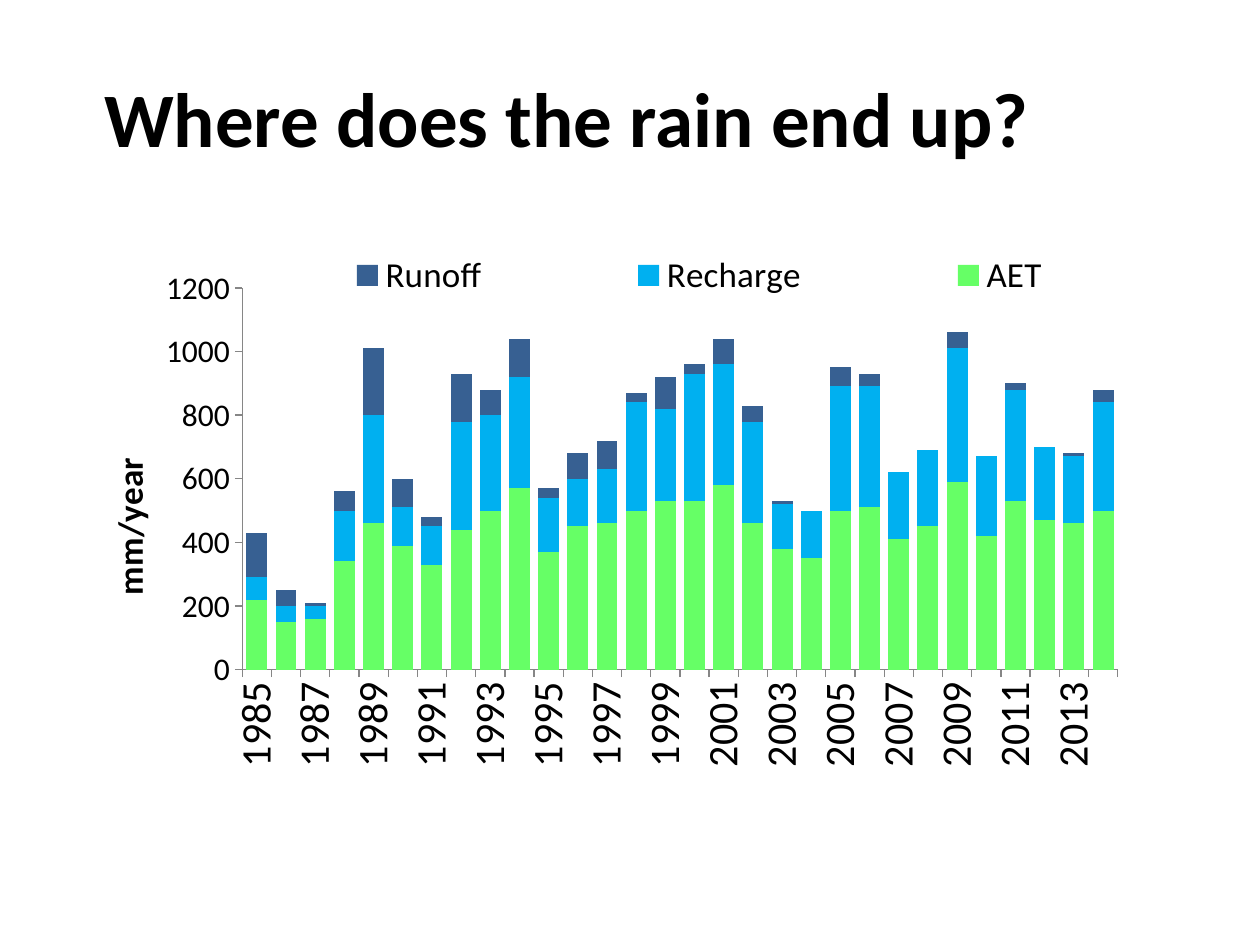
from lxml import etree
from pptx import Presentation
from pptx.chart.data import CategoryChartData
from pptx.dml.color import RGBColor
from pptx.enum.chart import XL_CHART_TYPE, XL_LEGEND_POSITION, XL_TICK_LABEL_POSITION, XL_TICK_MARK
from pptx.enum.text import MSO_ANCHOR, PP_ALIGN
from pptx.oxml.ns import qn
from pptx.util import Inches, Pt

STACKED = XL_CHART_TYPE.COLUMN_STACKED
LEGEND_RIGHT = XL_LEGEND_POSITION.RIGHT
LABELS_LOW = XL_TICK_LABEL_POSITION.LOW
TICK_OUTSIDE = XL_TICK_MARK.OUTSIDE
MIDDLE = MSO_ANCHOR.MIDDLE
CENTER = PP_ALIGN.CENTER

FONT = "Calibri"
COLORS = {
    "text": "000000",
    "axis": "868686",
    "AET": "66FF66",
    "Recharge": "00B0F0",
    "Runoff": "376092",
}
YEARS = [str(year) for year in range(1985, 2015)]
RAIN = {
    "AET": [220, 150, 160, 340, 460, 390, 330, 440, 500, 570,
            370, 450, 460, 500, 530, 530, 580, 460, 380, 350,
            500, 510, 410, 450, 590, 420, 530, 470, 460, 500],
    "Recharge": [70, 50, 40, 160, 340, 120, 120, 340, 300, 350,
                 170, 150, 170, 340, 290, 400, 380, 320, 140, 150,
                 390, 380, 210, 240, 420, 250, 350, 230, 210, 340],
    "Runoff": [140, 50, 10, 60, 210, 90, 30, 150, 80, 120,
               30, 80, 90, 30, 100, 30, 80, 50, 10, 0,
               60, 40, 0, 0, 50, 0, 20, 0, 10, 40],
}


def color(name):
    return RGBColor.from_string(COLORS[name])


def style_font(font, size, bold=False):
    font.name = FONT
    font.size = Pt(size)
    font.bold = bold
    font.color.rgb = color("text")


def set_layout(element, index, **values):
    """Give a chart part a manual layout, as fractions of the chart, at a child index."""
    for old in element.findall(qn("c:layout")):
        element.remove(old)
    layout = etree.Element(qn("c:layout"))
    manual = etree.SubElement(layout, qn("c:manualLayout"))
    for tag, value in values.items():
        etree.SubElement(manual, qn(f"c:{tag}")).set("val", str(value))
    element.insert(index, layout)


def add_title(slide, text):
    sp = slide.shapes.add_textbox(Inches(0.5), Inches(0.3), Inches(8), Inches(1.25))
    tf = sp.text_frame
    tf.word_wrap = True
    tf.vertical_anchor = MIDDLE
    tf.text = text
    p = tf.paragraphs[0]
    p.alignment = CENTER
    style_font(p.runs[0].font, 44, bold=True)


def style_axis(axis, size):
    axis.has_major_gridlines = False
    axis.major_tick_mark = TICK_OUTSIDE
    axis.format.line.color.rgb = color("axis")
    axis.format.line.width = Pt(0.75)
    style_font(axis.tick_labels.font, size)


def style_category_axis(axis):
    """Turn the years upright and name every second one."""
    style_axis(axis, 24)
    axis.tick_label_position = LABELS_LOW
    body = axis._element.find(qn("c:txPr")).find(qn("a:bodyPr"))
    body.set("rot", "-5400000")
    body.set("vert", "horz")
    skip = etree.Element(qn("c:tickLblSkip"))
    skip.set("val", "2")
    axis._element.find(qn("c:noMultiLvlLbl")).addprevious(skip)


def style_value_axis(axis, title):
    style_axis(axis, 18)
    axis.minimum_scale, axis.maximum_scale, axis.major_unit = 0, 1200, 200
    axis.tick_labels.number_format = "0"
    axis.tick_labels.number_format_is_linked = False
    tf = axis.axis_title.text_frame
    tf.text = title
    style_font(tf.paragraphs[0].runs[0].font, 20, bold=True)
    set_layout(axis.axis_title._element, 1, xMode="edge", yMode="edge", x=0.04, y=0.37)


def add_legend(chart):
    chart.has_legend = True
    legend = chart.legend
    legend.position = LEGEND_RIGHT
    legend.include_in_layout = False
    style_font(legend.font, 20)
    set_layout(legend._element, 1, xMode="edge", yMode="edge",
               x=0.14, y=0.06, w=0.86, h=0.08)


def add_rain_chart(slide):
    data = CategoryChartData(number_format="0")
    data.categories = YEARS
    for name, values in RAIN.items():
        data.add_series(name, values)
    chart = slide.shapes.add_chart(
        STACKED, Inches(0.42), Inches(1.67), Inches(9), Inches(5.17), data).chart
    chart.has_title = False
    style_font(chart.font, 10)

    plot = chart.plots[0]
    plot.gap_width = 39
    plot.overlap = 100
    plot.vary_by_categories = False
    for series in plot.series:
        series.format.fill.solid()
        series.format.fill.fore_color.rgb = color(series.name)

    style_category_axis(chart.category_axis)
    style_value_axis(chart.value_axis, "mm/year")
    add_legend(chart)
    plot_area = chart._chartSpace.chart.plotArea
    set_layout(plot_area, 0, layoutTarget="inner", xMode="edge", yMode="edge",
               x=0.167, y=0.119, w=0.772, h=0.586)


def main():
    prs = Presentation()
    prs.slide_width, prs.slide_height = Inches(10), Inches(7.5)
    slide = prs.slides.add_slide(prs.slide_layouts[6])
    add_title(slide, "Where does the rain end up?")
    add_rain_chart(slide)
    prs.save("out.pptx")


if __name__ == "__main__":
    main()
